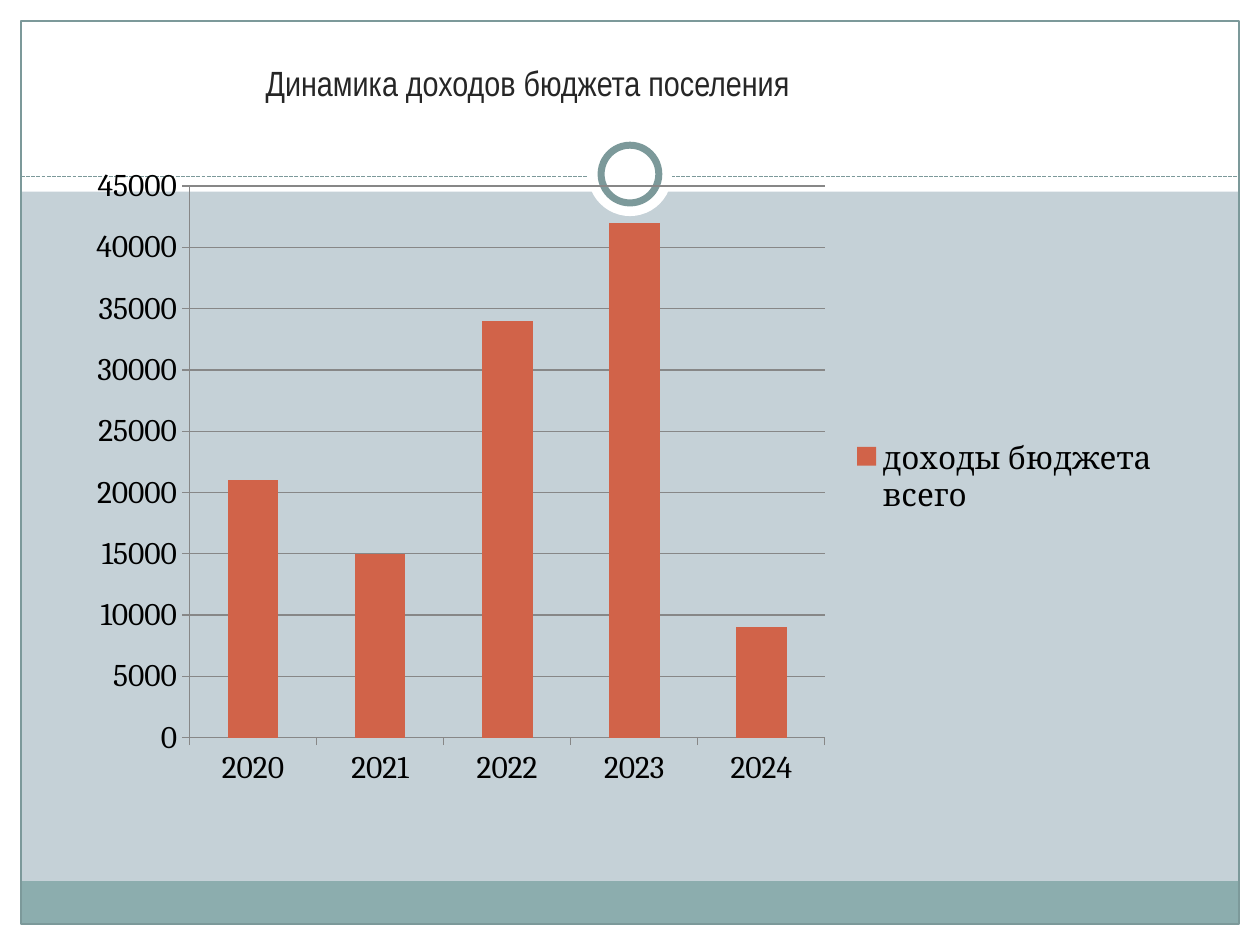
from pptx import Presentation
from pptx.chart.data import CategoryChartData
from pptx.dml.color import RGBColor
from pptx.enum.chart import XL_CHART_TYPE as CHART, XL_LEGEND_POSITION as LEGEND, XL_TICK_MARK as TICK
from pptx.enum.dml import MSO_LINE
from pptx.enum.shapes import MSO_CONNECTOR, MSO_SHAPE as SHAPE
from pptx.enum.text import MSO_AUTO_SIZE, PP_ALIGN
from pptx.oxml.ns import qn
from pptx.util import Pt
from lxml import etree

W, H = 720, 540
MARGIN = 12
WHITE, TEAL, GREY = "FFFFFF", "7C999A", "878787"


def rgb(value):
    return RGBColor.from_string(value)


def set_line(line, color, width):
    line.color.rgb = rgb(color)
    line.width = Pt(width)


def add_box(s, kind, box, fill=None, line=None, width=0.75):
    sp = s.shapes.add_shape(kind, *map(Pt, box))
    sp.shadow.inherit = False
    if fill:
        sp.fill.solid()
        sp.fill.fore_color.rgb = rgb(fill)
    else:
        sp.fill.background()
    if line:
        set_line(sp.line, line, width)
    else:
        sp.line.fill.background()
    return sp


def add_frame(s, w, h):
    # White edges and header band
    for box in [(0, h - MARGIN, w, MARGIN), (0, 0, w, 109.5),
                (0, 0, MARGIN, h), (w - MARGIN, 0, MARGIN, h)]:
        add_box(s, SHAPE.RECTANGLE, box, WHITE)
    # Footer band and outline
    inner = w - 2 * MARGIN
    add_box(s, SHAPE.RECTANGLE, (MARGIN, 503.5, inner, 24.5), "8CADAE")
    add_box(s, SHAPE.RECTANGLE, (MARGIN, MARGIN, inner, h - 2 * MARGIN), line=TEAL)
    # Dashed divider
    divider = s.shapes.add_connector(
        MSO_CONNECTOR.STRAIGHT, Pt(MARGIN), Pt(100.8), Pt(w - MARGIN), Pt(100.8))
    set_line(divider.line, TEAL, 0.75)
    divider.line.dash_style = MSO_LINE.SQUARE_DOT
    etree.SubElement(divider._element.spPr, qn("a:effectLst"))
    # Ring on the divider
    for size, line in [(48, None), (33, TEAL)]:
        box = ((w - size) / 2, 99.5 - size / 2, size, size)
        add_box(s, SHAPE.OVAL, box, WHITE, line, 4)


def add_chart(s, box):
    data = CategoryChartData()
    data.categories = ["2020", "2021", "2022", "2023", "2024"]
    data.add_series("доходы бюджета всего", [21000, 15000, 34000, 42000, 9000])
    chart = s.shapes.add_chart(CHART.COLUMN_CLUSTERED, *map(Pt, box), data).chart
    chart.has_title = False
    chart.font.name = "Cambria"
    chart.font.size = Pt(18)
    chart.font.color.rgb = rgb("000000")
    # Columns
    plot = chart.plots[0]
    plot.gap_width = 150
    plot.vary_by_categories = False
    fill = plot.series[0].format.fill
    fill.solid()
    fill.fore_color.rgb = rgb("D16349")
    # Axes and gridlines
    for axis in (chart.category_axis, chart.value_axis):
        axis.major_tick_mark = TICK.OUTSIDE
        axis.minor_tick_mark = TICK.NONE
        set_line(axis.format.line, GREY, 0.75)
    value_axis = chart.value_axis
    value_axis.minimum_scale, value_axis.maximum_scale = 0, 45000
    value_axis.major_unit = 5000
    value_axis.has_major_gridlines = True
    set_line(value_axis.major_gridlines.format.line, GREY, 0.75)
    # Legend
    chart.has_legend = True
    chart.legend.position = LEGEND.RIGHT
    chart.legend.include_in_layout = False


def add_title(s, box):
    tf = s.shapes.add_textbox(*map(Pt, box)).text_frame
    tf.word_wrap = True
    tf.auto_size = MSO_AUTO_SIZE.SHAPE_TO_FIT_TEXT
    p = tf.paragraphs[0]
    p.text = "Динамика доходов бюджета поселения"
    p.alignment = PP_ALIGN.LEFT
    p.font.name = "Arial Narrow"
    p.font.size = Pt(20)
    p.font.color.rgb = rgb("262626")


def main():
    prs = Presentation()
    prs.slide_width, prs.slide_height = Pt(W), Pt(H)
    s = prs.slides.add_slide(prs.slide_layouts[6])
    s.background.fill.solid()
    s.background.fill.fore_color.rgb = rgb("C5D1D7")
    add_frame(s, W, H)
    add_chart(s, (42.5, 88.5, 628, 368.5))
    add_title(s, (144.7, 31.7, 412.5, 31.5))
    prs.save("out.pptx")


if __name__ == "__main__":
    main()
